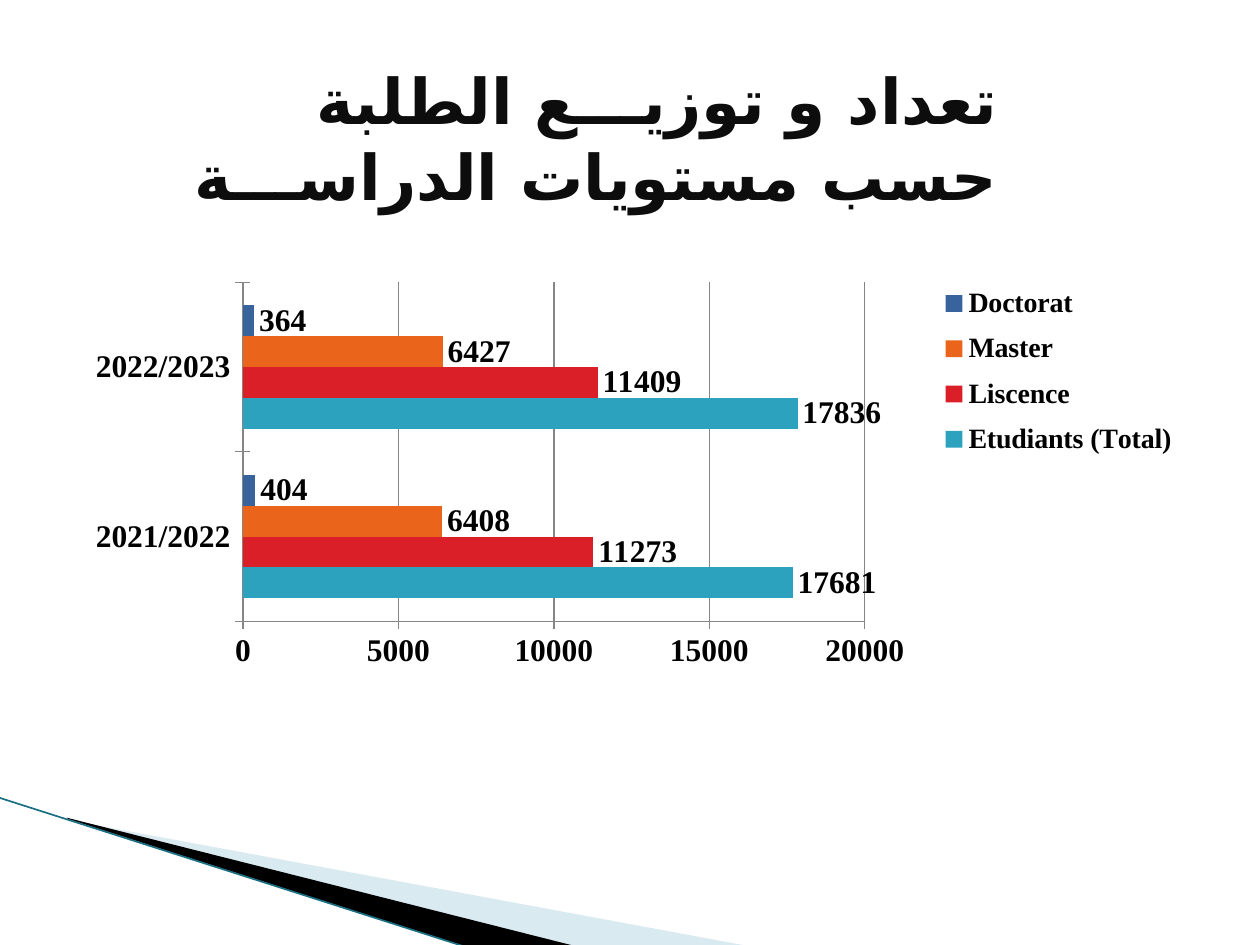
from typing import NamedTuple

from lxml import etree
from pptx import Presentation
from pptx.chart.data import CategoryChartData
from pptx.dml.color import RGBColor
from pptx.enum.chart import XL_CHART_TYPE, XL_LABEL_POSITION, XL_LEGEND_POSITION, XL_TICK_MARK
from pptx.enum.shapes import MSO_CONNECTOR
from pptx.enum.text import MSO_ANCHOR, MSO_AUTO_SIZE, PP_ALIGN
from pptx.oxml import parse_xml
from pptx.oxml.ns import nsdecls, qn
from pptx.util import Inches, Pt

BAR_CLUSTERED = XL_CHART_TYPE.BAR_CLUSTERED
OUTSIDE_END = XL_LABEL_POSITION.OUTSIDE_END
LEGEND_RIGHT = XL_LEGEND_POSITION.RIGHT
TICK_CROSS = XL_TICK_MARK.CROSS
STRAIGHT = MSO_CONNECTOR.STRAIGHT
TOP = MSO_ANCHOR.TOP
GROW = MSO_AUTO_SIZE.SHAPE_TO_FIT_TEXT
ALIGN_RIGHT = PP_ALIGN.RIGHT

COLORS = {
    "title": "0D0D0D",
    "black": "000000",
    "pale": "A0CBDC",
    "edge": "1B6F83",
    "grid": "868686",
}
CHART_FONT = "Times New Roman"
TITLE_FONT = "Arial"
ARABIC_FONT = "DejaVu Sans"
YEARS = ("2021/2022", "2022/2023")


class Level(NamedTuple):
    name: str
    counts: tuple[int, int]
    color: str


class Wedge(NamedTuple):
    points: tuple[tuple[float, float], ...]
    color: str
    opacity: int


LEVELS = (
    Level("Etudiants (Total)", (17681, 17836), "2DA2BF"),
    Level("Liscence", (11273, 11409), "DA1F28"),
    Level("Master", (6408, 6427), "EB641B"),
    Level("Doctorat", (404, 364), "39639D"),
)
WEDGES = (
    Wedge(((0.55, 6.51), (5.95, 7.51), (4.56, 7.51), (0.55, 6.5)), COLORS["pale"], 40),
    Wedge(((0.53, 6.49), (4.57, 7.51), (3.72, 7.52), (0.54, 6.5)), COLORS["black"], 100),
)


def rgb(value: str) -> RGBColor:
    return RGBColor.from_string(value)


def add_wedge(slide, wedge: Wedge) -> None:
    start, *others = [(Inches(x), Inches(y)) for x, y in wedge.points]
    builder = slide.shapes.build_freeform(*start)
    builder.add_line_segments(others, close=True)
    shape = builder.convert_to_shape()
    shape.shadow.inherit = False
    shape.line.fill.background()
    shape.fill.solid()
    shape.fill.fore_color.rgb = rgb(wedge.color)
    if wedge.opacity < 100:
        color = shape.fill._xPr.find(".//" + qn("a:srgbClr"))
        etree.SubElement(color, qn("a:alpha")).set("val", str(wedge.opacity * 1000))


def add_edge(slide) -> None:
    edge = slide.shapes.add_connector(
        STRAIGHT, Inches(-0.01), Inches(6.33), Inches(3.71), Inches(7.52))
    edge.line.color.rgb = rgb(COLORS["edge"])
    edge.line.width = Pt(0.95)
    etree.SubElement(edge._element.spPr, qn("a:effectLst"))


def set_title(slide, text: str) -> None:
    title = slide.shapes.title
    title.left, title.top = Inches(0.9), Inches(0.44)
    title.width, title.height = Inches(7.12), Inches(0.71)
    frame = title.text_frame
    frame.text = text
    frame.word_wrap = False
    frame.auto_size = GROW
    frame.vertical_anchor = TOP
    para = frame.paragraphs[0]
    para.alignment = ALIGN_RIGHT
    para._p.get_or_add_pPr().set("rtl", "1")
    font = para.runs[0].font
    font.name, font.size, font.bold = TITLE_FONT, Pt(36), True
    font.color.rgb = rgb(COLORS["title"])
    properties = para.runs[0]._r.get_or_add_rPr()
    etree.SubElement(properties, qn("a:cs")).set("typeface", ARABIC_FONT)


def make_layout(x: float, y: float, width: float, height: float, inner: bool = False):
    """Return a manual layout in fractions of the chart area."""
    target = '<c:layoutTarget val="inner"/>' if inner else ""
    return parse_xml(
        f'<c:layout {nsdecls("c")}><c:manualLayout>{target}'
        '<c:xMode val="edge"/><c:yMode val="edge"/>'
        f'<c:x val="{x}"/><c:y val="{y}"/><c:w val="{width}"/><c:h val="{height}"/>'
        "</c:manualLayout></c:layout>")


def place_plot(chart) -> None:
    area = chart._chartSpace.chart.plotArea
    for old in area.findall(qn("c:layout")):
        area.remove(old)
    area.insert(0, make_layout(0.154, 0.053, 0.536, 0.649, inner=True))


def add_legend(chart) -> None:
    chart.has_legend = True
    legend = chart.legend
    legend.position = LEGEND_RIGHT
    legend.include_in_layout = False
    legend.font.size = Pt(16)
    element = legend._element
    for old in element.findall(qn("c:layout")):
        element.remove(old)
    element.find(qn("c:legendPos")).addnext(make_layout(0.737, 0.037, 0.24, 0.373))


def add_level_chart(slide) -> None:
    data = CategoryChartData(number_format="General")
    data.categories = YEARS
    for level in LEVELS:
        data.add_series(level.name, level.counts)
    chart = slide.shapes.add_chart(
        BAR_CLUSTERED, Inches(0.51), Inches(2.02), Inches(9.21), Inches(4.15), data).chart
    chart.has_title = False
    chart.font.name, chart.font.size, chart.font.bold = CHART_FONT, Pt(18), True
    chart.font.color.rgb = rgb(COLORS["black"])

    plot = chart.plots[0]
    plot.vary_by_categories = False
    plot.gap_width, plot.overlap = 150, 0
    for series, level in zip(plot.series, LEVELS):
        series.format.fill.solid()
        series.format.fill.fore_color.rgb = rgb(level.color)
        labels = series.data_labels
        labels.show_value = True
        labels.position = OUTSIDE_END

    values = chart.value_axis
    values.minimum_scale, values.maximum_scale, values.major_unit = 0, 20000, 5000
    values.has_major_gridlines = True
    for axis in (chart.category_axis, values):
        axis.major_tick_mark = TICK_CROSS
        axis.tick_labels.font.size = Pt(18)
    for line in (chart.category_axis.format.line, values.format.line,
                 values.major_gridlines.format.line):
        line.color.rgb = rgb(COLORS["grid"])
        line.width = Pt(0.75)
    place_plot(chart)
    add_legend(chart)


def main() -> None:
    deck = Presentation()
    deck.slide_width, deck.slide_height = Inches(10), Inches(7.5)
    slide = deck.slides.add_slide(deck.slide_layouts[5])
    for wedge in WEDGES:
        add_wedge(slide, wedge)
    add_edge(slide)
    add_level_chart(slide)
    set_title(slide, "تعداد و توزيـــع الطلبة حسب مستويات الدراســـة ")
    deck.save("out.pptx")


if __name__ == "__main__":
    main()
